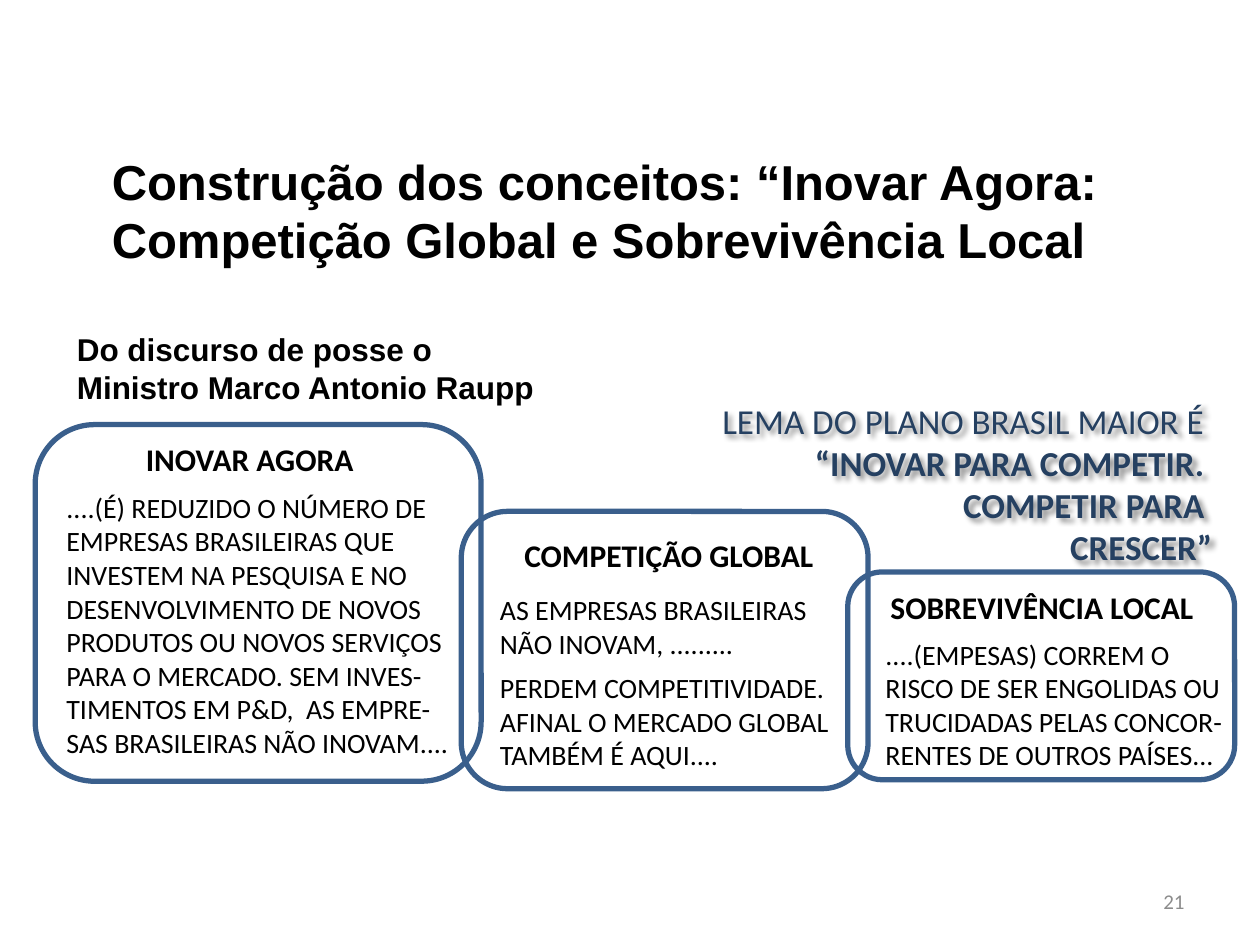
from lxml.etree import SubElement
from pptx import Presentation
from pptx.dml.color import RGBColor
from pptx.enum.shapes import MSO_SHAPE
from pptx.enum.text import MSO_ANCHOR, PP_ALIGN
from pptx.oxml.ns import qn
from pptx.util import Cm, Pt

BLACK = RGBColor(0x00, 0x00, 0x00)
NAVY = RGBColor(0x25, 0x40, 0x61)
BLUE = RGBColor(0x3A, 0x5F, 0x8C)
GRAY = RGBColor(0x8C, 0x8C, 0x8C)

# Box, heading offset, body offset and width, heading, body as (text, space before)
CARDS = [
    ((0.71, 8.56, 8.99, 7.19), (1.98, 0.18), (0.38, 1.2, 8.41), "INOVAR AGORA", [
        ("....(É) REDUZIDO O NÚMERO DE EMPRESAS BRASILEIRAS QUE", 0),
        ("INVESTEM NA PESQUISA E NO DESENVOLVIMENTO DE NOVOS PRODUTOS OU "
         "NOVOS SERVIÇOS PARA O MERCADO. SEM INVES-TIMENTOS EM P&D,  AS "
         "EMPRE-SAS BRASILEIRAS NÃO INOVAM....", 0)]),
    ((9.3, 10.31, 8.2, 5.59), (1.02, 0.38), (0.53, 1.52, 7.39), "COMPETIÇÃO GLOBAL", [
        ("AS EMPRESAS BRASILEIRAS NÃO INOVAM, .........", 0),
        ("PERDEM COMPETITIVIDADE.", 6),
        ("AFINAL O MERCADO GLOBAL TAMBÉM É AQUI....", 0)]),
    ((17.09, 11.53, 7.8, 4.19), (0.61, 0.2), (0.51, 1.19, 7.49), "SOBREVIVÊNCIA LOCAL", [
        ("....(EMPESAS) CORREM O RISCO DE SER ENGOLIDAS OU TRUCIDADAS PELAS "
         "CONCOR-RENTES DE OUTROS PAÍSES...", 0)]),
]


def add_text(p, text, size, font="Calibri", color=BLACK, bold=False,
             align=PP_ALIGN.LEFT, before=0):
    p.alignment = align
    p.space_before = Pt(before)
    r = p.add_run()
    r.text = text
    r.font.name, r.font.size, r.font.bold = font, Pt(size), bold
    r.font.color.rgb = color


def add_box(s, box):
    sp = s.shapes.add_textbox(*map(Cm, box))
    sp.text_frame.word_wrap = True
    return sp


def next_paragraph(tf, i):
    return tf.add_paragraph() if i else tf.paragraphs[0]


def add_soft_shadow(sp):
    """Without a fill or line, the shape's shadow falls from its text."""
    effects = SubElement(sp._element.spPr, qn("a:effectLst"))
    shadow = SubElement(effects, qn("a:outerShdw"), blurRad="38100",
                        dist="38100", dir="2700000", algn="tl")
    color = SubElement(shadow, qn("a:srgbClr"), val="000000")
    SubElement(color, qn("a:alpha"), val="43000")


def set_title(s, box):
    title = s.shapes.title
    title.left, title.top, title.width, title.height = map(Cm, box)
    tf = title.text_frame
    tf.word_wrap = True
    tf.vertical_anchor = MSO_ANCHOR.TOP
    add_text(tf.paragraphs[0], "Construção dos conceitos: “Inovar Agora: "
             "Competição Global e Sobrevivência Local", 28, "Arial", bold=True)


def add_source(s, box):
    add_text(add_box(s, box).text_frame.paragraphs[0],
             "Do discurso de posse o Ministro Marco Antonio Raupp",
             18, "Arial", bold=True)


def add_motto(s, box):
    sp = add_box(s, box)
    add_soft_shadow(sp)
    lines = ["LEMA DO PLANO BRASIL MAIOR É ", "“INOVAR PARA COMPETIR. ",
             "COMPETIR PARA ", "CRESCER”"]
    for i, line in enumerate(lines):
        add_text(next_paragraph(sp.text_frame, i), line, 20, color=NAVY,
                 bold=i > 0, align=PP_ALIGN.RIGHT)


def add_card(s, box, heading_at, body_at, heading, body):
    left, top, width, height = box
    dx, dy, body_width = body_at
    tf = add_box(s, (left + dx, top + dy, body_width, height - dy)).text_frame
    for i, (text, before) in enumerate(body):
        add_text(next_paragraph(tf, i), text, 16, before=before)

    frame = s.shapes.add_shape(MSO_SHAPE.ROUNDED_RECTANGLE, *map(Cm, box))
    frame.shadow.inherit = False
    frame.fill.background()
    frame.line.color.rgb = BLUE
    frame.line.width = Pt(3)

    dx, dy = heading_at
    tf = add_box(s, (left + dx, top + dy, width - dx, 1.02)).text_frame
    add_text(tf.paragraphs[0], heading, 18, bold=True)


def add_page_number(s, box):
    tf = add_box(s, box).text_frame
    tf.vertical_anchor = MSO_ANCHOR.MIDDLE
    add_text(tf.paragraphs[0], "21", 12, color=GRAY, align=PP_ALIGN.RIGHT)


def main():
    prs = Presentation()
    prs.slide_width, prs.slide_height = Cm(25.4), Cm(19.05)
    s = prs.slides.add_slide(prs.slide_layouts[5])
    set_title(s, (2, 2.92, 21.9, 3))
    add_source(s, (1.3, 6.53, 10, 1.8))
    add_motto(s, (13.49, 7.92, 11.2, 3.68))
    for card in CARDS:
        add_card(s, *card)
    add_page_number(s, (18.2, 17.65, 5.93, 1.02))
    prs.save("out.pptx")


if __name__ == "__main__":
    main()
